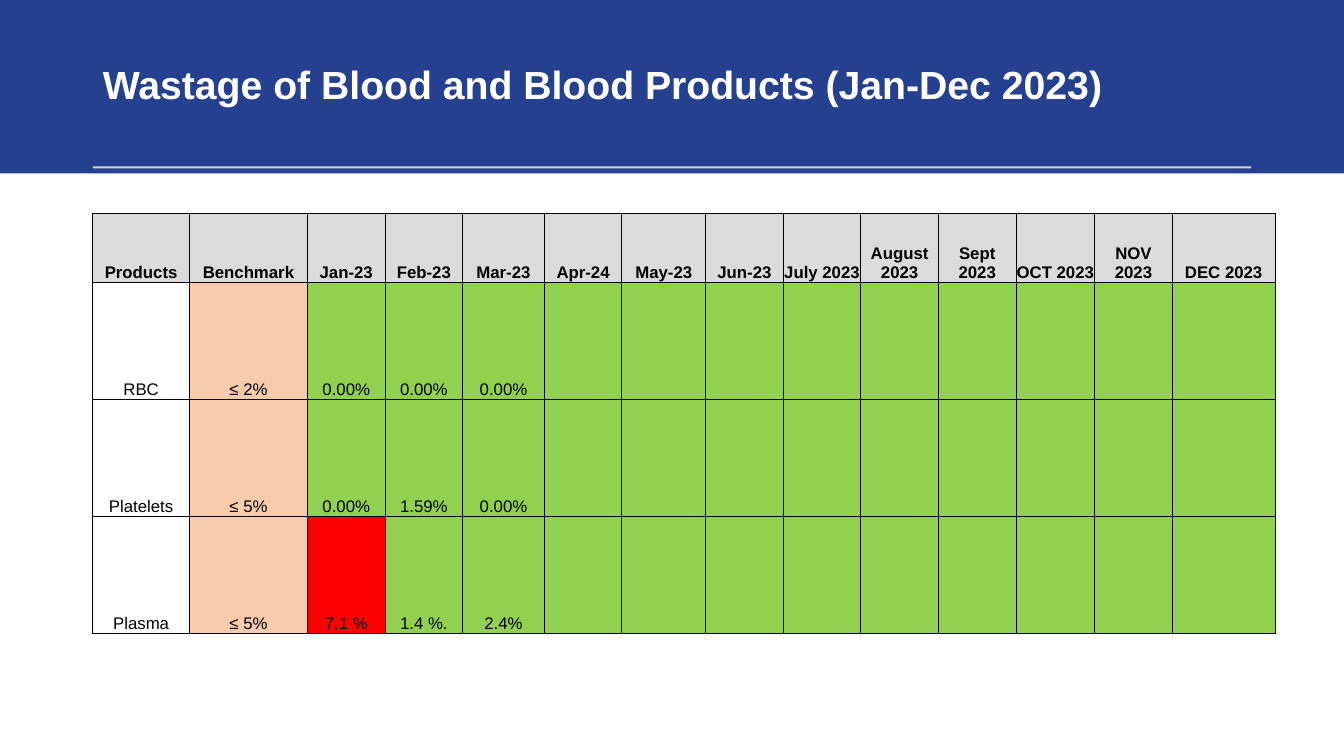
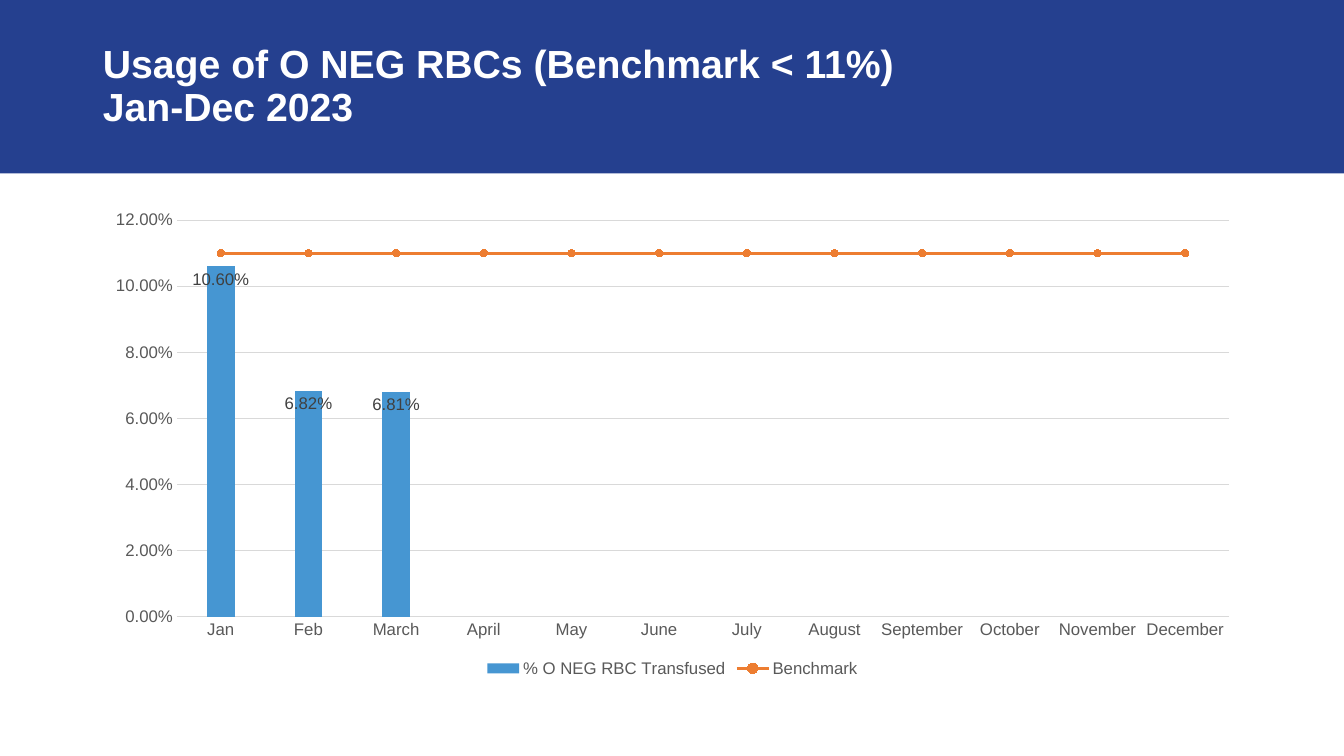
"""Build two slides on blood product wastage and O NEG red cell usage."""
from copy import deepcopy

from pptx import Presentation
from pptx.chart.data import CategoryChartData
from pptx.dml.color import RGBColor
from pptx.enum.chart import (XL_CHART_TYPE, XL_LABEL_POSITION, XL_LEGEND_POSITION,
                             XL_MARKER_STYLE, XL_TICK_MARK)
from pptx.enum.shapes import MSO_SHAPE
from pptx.enum.text import MSO_ANCHOR, MSO_AUTO_SIZE, PP_ALIGN
from pptx.oxml import parse_xml
from pptx.oxml.ns import nsdecls, qn
from pptx.util import Inches, Pt

RECTANGLE = MSO_SHAPE.RECTANGLE
LEFT, CENTER = PP_ALIGN.LEFT, PP_ALIGN.CENTER
MIDDLE, BOTTOM = MSO_ANCHOR.MIDDLE, MSO_ANCHOR.BOTTOM
NO_AUTOFIT = MSO_AUTO_SIZE.NONE
CLUSTERED = XL_CHART_TYPE.COLUMN_CLUSTERED
INSIDE_END = XL_LABEL_POSITION.INSIDE_END
LEGEND_BOTTOM = XL_LEGEND_POSITION.BOTTOM
CIRCLE = XL_MARKER_STYLE.CIRCLE
NO_TICKS = XL_TICK_MARK.NONE

FONT = "Arial"
PERCENT = "0.00%"
TITLE_ONLY = 5
COLORS = {
    "band": "25408F", "white": "FFFFFF", "black": "000000", "rule": "D5D5D5",
    "header": "DBDBDB", "benchmark": "F8CBAD", "good": "92D050", "bad": "FF0000",
    "axis_text": "595959", "label_text": "404040", "grid": "D9D9D9",
    "column": "4696D2", "line": "ED7D31",
}

WASTAGE_HEADERS = ["Products", "Benchmark", "Jan-23", "Feb-23", "Mar-23", "Apr-24",
                   "May-23", "Jun-23", "July 2023", "August 2023", "Sept 2023",
                   "OCT 2023", "NOV 2023", "DEC 2023"]
WASTAGE_ROWS = [
    ["RBC", "≤ 2%", "0.00%", "0.00%", "0.00%"],
    ["Platelets", "≤ 5%", "0.00%", "1.59%", "0.00%"],
    ["Plasma", "≤ 5%", "7.1 %", "1.4 %.", "2.4%"],
]
OVER_BENCHMARK = {(3, 2)}
COLUMN_WIDTHS = [0.96, 1.17, 0.77, 0.77, 0.81, 0.77, 0.83,
                 0.77, 0.77, 0.77, 0.77, 0.78, 0.77, 1.02]
ROW_HEIGHTS = [0.68, 1.16, 1.16, 1.16]

MONTHS = ["Jan", "Feb", "March", "April", "May", "June", "July", "August",
          "September", "October", "November", "December"]
USAGE = [0.106, 0.0682, 0.0681] + [None] * 9
BENCHMARK = [0.11] * len(MONTHS)


def rgb(name):
    """Return the named colour."""
    return RGBColor.from_string(COLORS[name])


def style_font(font, size=12, color="black", bold=False):
    """Apply the deck's typeface to a font."""
    font.name, font.size, font.bold = FONT, Pt(size), bold
    font.color.rgb = rgb(color)


def write_text(text_frame, text, align=CENTER, spacing=None, **font_format):
    """Write one paragraph, with line breaks sharing its format."""
    text_frame.text = text
    paragraph = text_frame.paragraphs[0]
    paragraph.alignment = align
    if spacing:
        paragraph.line_spacing = spacing
    for run in paragraph.runs:
        style_font(run.font, **font_format)
    for line_break in paragraph._p.findall(qn("a:br")):
        line_break.insert(0, deepcopy(paragraph.runs[0]._r.rPr))


def add_cell_borders(cell):
    """Draw a thin black line on each side of a cell."""
    properties = cell._tc.get_or_add_tcPr()
    for side in ("lnL", "lnR", "lnT", "lnB"):
        properties.append(parse_xml(
            f'<a:{side} {nsdecls("a")} w="{Pt(0.75)}"><a:solidFill>'
            f'<a:srgbClr val="{COLORS["black"]}"/></a:solidFill></a:{side}>'))


def wastage_fill(row, column):
    """Return the colour name for a cell of the wastage table."""
    if row == 0:
        return "header"
    if (row, column) in OVER_BENCHMARK:
        return "bad"
    return {0: "white", 1: "benchmark"}.get(column, "good")


def move_to_line_plot(chart, index):
    """Move one column series to a line plot on the same axes."""
    bar_plot = chart.plots[0]._element
    series = bar_plot.findall(qn("c:ser"))[index]
    line_plot = parse_xml(
        f'<c:lineChart {nsdecls("c")}><c:grouping val="stacked"/>'
        '<c:varyColors val="0"/><c:marker val="1"/></c:lineChart>')
    for inverted in series.findall(qn("c:invertIfNegative")):
        series.remove(inverted)
    line_plot.insert(2, series)
    for axis_id in bar_plot.findall(qn("c:axId")):
        line_plot.append(deepcopy(axis_id))
    bar_plot.addnext(line_plot)


class Deck:
    """Hold the shared style and the current slide."""

    def __init__(self):
        """Set up the page size and the layout."""
        self.presentation = Presentation()
        self.presentation.slide_width = Inches(13.33)
        self.presentation.slide_height = Inches(7.5)
        self.layout = self.presentation.slide_layouts[TITLE_ONLY]
        self.slide = None

    def add_rectangle(self, left, top, width, height, color):
        """Add a plain filled rectangle."""
        shape = self.slide.shapes.add_shape(
            RECTANGLE, Inches(left), Inches(top), Inches(width), Inches(height))
        shape.shadow.inherit = False
        shape.fill.solid()
        shape.fill.fore_color.rgb = rgb(color)
        shape.line.fill.background()
        return shape

    def add_slide(self, text):
        """Start a slide with the blue band and its title."""
        self.slide = self.presentation.slides.add_slide(self.layout)
        title = self.slide.shapes.title
        band = self.add_rectangle(0, 0, 13.33, 1.72, "band")
        title._element.addprevious(band._element)
        title.left, title.top = Inches(0.92), Inches(0.14)
        title.width, title.height = Inches(11.5), Inches(1.45)
        text_frame = title.text_frame
        text_frame.auto_size = NO_AUTOFIT
        text_frame.word_wrap = True
        text_frame.vertical_anchor = MIDDLE
        write_text(text_frame, text, align=LEFT, spacing=0.9,
                   size=28, color="white", bold=True)

    def add_table(self, left, top, rows, widths, heights, fill_rule):
        """Add a bordered table whose fills follow a rule."""
        table = self.slide.shapes.add_table(
            len(heights), len(widths), Inches(left), Inches(top),
            Inches(sum(widths)), Inches(sum(heights))).table
        table.first_row = table.horz_banding = False
        for column, width in zip(table.columns, widths):
            column.width = Inches(width)
        for row_index, height in enumerate(heights):
            table.rows[row_index].height = Inches(height)
            for column_index in range(len(widths)):
                cell = table.cell(row_index, column_index)
                add_cell_borders(cell)
                cell.fill.solid()
                cell.fill.fore_color.rgb = rgb(fill_rule(row_index, column_index))
                cell.vertical_anchor = BOTTOM
                cell.margin_left = cell.margin_right = 0
                cell.margin_top = cell.margin_bottom = 0
                if column_index < len(rows[row_index]):
                    write_text(cell.text_frame, rows[row_index][column_index],
                               bold=row_index == 0)

    def add_benchmark_chart(self, left, top, width, height, categories, columns, line):
        """Add columns with a benchmark line over them."""
        data = CategoryChartData(number_format=PERCENT)
        data.categories = categories
        for name, values in (columns, line):
            data.add_series(name, values)
        chart = self.slide.shapes.add_chart(
            CLUSTERED, Inches(left), Inches(top), Inches(width), Inches(height),
            data).chart
        style_font(chart.font, size=10)
        chart.has_title = False
        chart.has_legend = True
        chart.legend.position = LEGEND_BOTTOM
        chart.legend.include_in_layout = False
        style_font(chart.legend.font, color="axis_text")
        self.style_axes(chart)
        move_to_line_plot(chart, 1)
        column_plot, line_plot = chart.plots
        column_plot.gap_width, column_plot.overlap = 219, -27
        column_plot.vary_by_categories = False
        self.style_columns(column_plot.series[0])
        self.style_line(line_plot.series[0])

    def style_axes(self, chart):
        """Format both axes and the gridlines."""
        category_axis, value_axis = chart.category_axis, chart.value_axis
        for axis in (category_axis, value_axis):
            axis.major_tick_mark = axis.minor_tick_mark = NO_TICKS
            style_font(axis.tick_labels.font, color="axis_text")
        value_axis.minimum_scale, value_axis.maximum_scale = 0, 0.12
        value_axis.major_unit = 0.02
        value_axis.tick_labels.number_format = PERCENT
        value_axis.tick_labels.number_format_is_linked = False
        value_axis.format.line.fill.background()
        for line in (category_axis.format.line, value_axis.major_gridlines.format.line):
            line.color.rgb = rgb("grid")
            line.width = Pt(0.75)

    def style_columns(self, series):
        """Colour the columns and label their values."""
        series.format.fill.solid()
        series.format.fill.fore_color.rgb = rgb("column")
        labels = series.data_labels
        labels.show_value = True
        labels.position = INSIDE_END
        labels.number_format = PERCENT
        labels.number_format_is_linked = False
        style_font(labels.font, color="label_text")

    def style_line(self, series):
        """Colour the line and its round markers."""
        series.smooth = False
        series.format.line.color.rgb = rgb("line")
        series.format.line.width = Pt(2.25)
        marker = series.marker
        marker.style, marker.size = CIRCLE, 5
        marker.format.fill.solid()
        marker.format.fill.fore_color.rgb = rgb("line")
        marker.format.line.color.rgb = rgb("line")


def main():
    """Build and save the slides."""
    deck = Deck()
    deck.add_slide("Wastage of Blood and Blood Products (Jan-Dec 2023)")
    deck.add_rectangle(0.92, 1.65, 11.49, 0.02, "rule")
    deck.add_table(0.92, 2.12, [WASTAGE_HEADERS] + WASTAGE_ROWS,
                   COLUMN_WIDTHS, ROW_HEIGHTS, wastage_fill)

    deck.add_slide("Usage of O NEG RBCs (Benchmark < 11%)\vJan-Dec 2023")
    deck.add_benchmark_chart(0.92, 2, 11.5, 4.76, MONTHS,
                             ("% O NEG RBC Transfused", USAGE),
                             ("Benchmark", BENCHMARK))
    deck.presentation.save("out.pptx")


if __name__ == "__main__":
    main()
